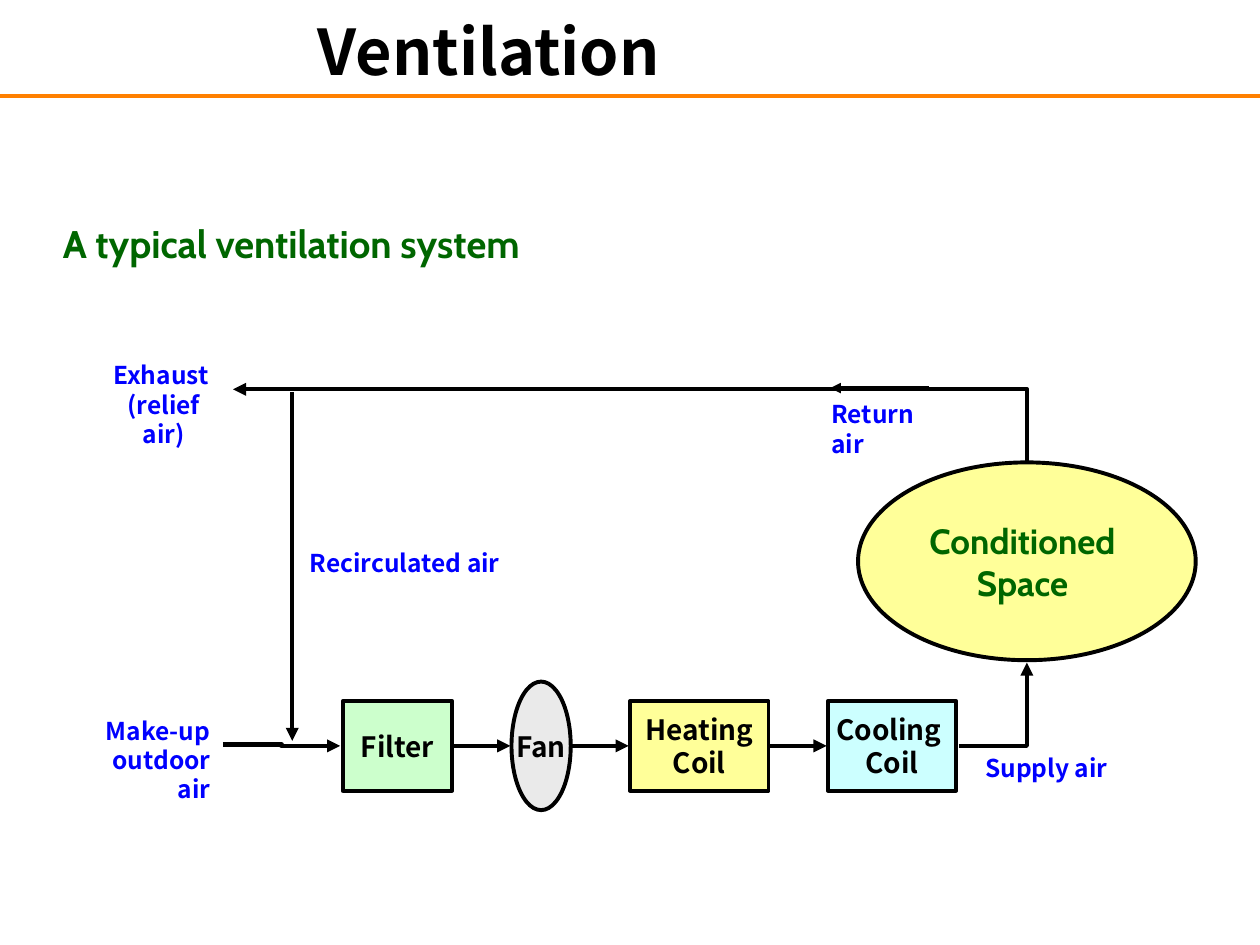
import pptx
import pptx.util
import pptx.dml.color
import pptx.enum.shapes
import pptx.enum.text
import pptx.oxml.ns
from lxml import etree

Inches = pptx.util.Inches
SHAPE = pptx.enum.shapes.MSO_SHAPE
CONN = pptx.enum.shapes.MSO_CONNECTOR
ALIGN = pptx.enum.text.PP_ALIGN
ANCHOR = pptx.enum.text.MSO_ANCHOR
AUTO = pptx.enum.text.MSO_AUTO_SIZE
qn = pptx.oxml.ns.qn

SANS, HEAD = "Noto Sans CJK KR", "Cabin"
COLORS = {"black": "000000", "rule": "FF8000", "heading": "006600",
          "label": "0000FF", "green": "CCFFCC", "gray": "EAEAEA",
          "yellow": "FFFF99", "cyan": "CCFFFF"}


def rgb(name):
    """Return the named palette colour."""
    return pptx.dml.color.RGBColor.from_string(COLORS[name])


def write(sp, lines, size, color, font=SANS, align=ALIGN.CENTER):
    """Fill a shape with bold paragraphs in one style."""
    tf = sp.text_frame
    tf.text = "\n".join(lines)
    for p in tf.paragraphs:
        p.alignment = align
        for r in p.runs:
            r.font.name, r.font.size = font, pptx.util.Pt(size)
            r.font.bold = True
            r.font.color.rgb = rgb(color)


def add_text(s, box, lines, size, color, font=SANS, align=ALIGN.LEFT):
    """Add a wrapping text box that grows with its text."""
    sp = s.shapes.add_textbox(*map(Inches, box))
    sp.text_frame.word_wrap = True
    sp.text_frame.auto_size = AUTO.SHAPE_TO_FIT_TEXT
    write(sp, lines, size, color, font, align)
    return sp


def add_node(s, kind, box, fill, lines=()):
    """Add an outlined component with an optional centred name."""
    sp = s.shapes.add_shape(kind, *map(Inches, box))
    sp.shadow.inherit = False
    sp.fill.solid()
    sp.fill.fore_color.rgb = rgb(fill)
    sp.line.color.rgb = rgb("black")
    sp.line.width = pptx.util.Pt(2.25)
    if lines:
        sp.text_frame.word_wrap = False
        sp.text_frame.vertical_anchor = ANCHOR.MIDDLE
        write(sp, lines, 16, "black")


def add_line(s, ends, width=2.5, color="black", kind=CONN.STRAIGHT,
             arrow="tailEnd", preset=None):
    """Add a connector with an optional arrowhead and preset outline."""
    sp = s.shapes.add_connector(kind, *map(Inches, ends))
    sp.line.color.rgb = rgb(color)
    sp.line.width = pptx.util.Pt(width)
    pr = sp._element.spPr
    if preset:
        pr.find(qn("a:prstGeom")).set("prst", preset)
    if arrow:
        etree.SubElement(pr.find(qn("a:ln")), qn("a:" + arrow), type="triangle")
    etree.SubElement(pr, qn("a:effectLst"))


def add_header(s, x, y, w, h):
    """Place the slide title above a full-width rule."""
    sp = s.shapes.add_textbox(Inches(x), Inches(y), Inches(0.776 * w), Inches(h))
    sp.text_frame.word_wrap = True
    sp.text_frame.vertical_anchor = ANCHOR.MIDDLE
    write(sp, ["Ventilation"], 36, "black")
    add_line(s, (x, y + 0.76, x + w, y + 0.76), 2, "rule", arrow=None)


def add_supply_row(s, x, y):
    """Place the air handling components along the flow axis at y."""
    nodes = [(SHAPE.RECTANGLE, 0.95, 0.87, 0.71, "green", ["Filter"]),
             (SHAPE.OVAL, 2.29, 0.47, 1.02, "gray", ["Fan"]),
             (SHAPE.RECTANGLE, 3.23, 1.1, 0.71, "yellow", ["Heating", "Coil"]),
             (SHAPE.RECTANGLE, 4.8, 1.02, 0.71, "cyan", ["Cooling ", "Coil"])]
    for kind, dx, w, h, fill, lines in nodes:
        add_node(s, kind, (x + dx, y - h / 2, w, h), fill, lines)
    for (_, dx, w, *_), after in zip(nodes, nodes[1:]):
        add_line(s, (x + dx + w + 0.01, y, x + after[1] - 0.01, y))
    add_line(s, (x, y - 0.01, x + 0.93, y), kind=CONN.ELBOW)
    add_line(s, (x + 5.84, y, x + 6.38, y - 0.66),
             kind=CONN.ELBOW, preset="bentConnector2")


def add_space(s, x, y, w, h):
    """Place the conditioned space and its name."""
    add_node(s, SHAPE.OVAL, (x, y, w, h), "yellow")
    add_text(s, (x + 0.28, y + 0.4, 2.05, 0.77), ["Conditioned Space"],
             20, "heading", HEAD, ALIGN.CENTER)


def add_diagram(s, x, y):
    """Place the air loop with its labels from its top left corner."""
    add_space(s, x + 6.31, y + 0.87, 2.68, 1.57)
    add_supply_row(s, x + 1.27, y + 3.12)
    add_line(s, (x + 1.35, y + 0.29, x + 7.65, y + 0.86), kind=CONN.ELBOW,
             arrow="headEnd", preset="bentConnector2")
    add_line(s, (x + 1.82, y + 0.31, x + 1.82, y + 3.08))
    add_line(s, (x + 6.87, y + 0.28, x + 6.09, y + 0.28), 2)
    labels = [(0.01, 2.83, 1.26, 0.57, ["Make-up", "outdoor air"], ALIGN.RIGHT),
              (0.25, 0.01, 1.1, 0.57, ["Exhaust ", "(relief air)"], ALIGN.CENTER),
              (7.22, 3.13, 1.93, 0.33, ["Supply air"], ALIGN.LEFT),
              (6, 0.32, 1.1, 0.33, ["Return air"], ALIGN.LEFT),
              (1.86, 1.5, 1.93, 0.33, ["Recirculated air"], ALIGN.LEFT)]
    for dx, dy, w, h, lines, align in labels:
        add_text(s, (x + dx, y + dy, w, h), lines, 14, "label", align=align)


def main():
    """Build and save the slide."""
    prs = pptx.Presentation()
    prs.slide_width, prs.slide_height = Inches(10), Inches(7.5)
    s = prs.slides.add_slide(prs.slide_layouts[6])
    add_header(s, 0, 0, 10, 0.79)
    add_text(s, (0.4, 1.7, 5.62, 0.47), ["A typical ventilation system"],
             22, "heading", HEAD)
    add_diagram(s, 0.5, 2.8)
    prs.save("out.pptx")


if __name__ == "__main__":
    main()
